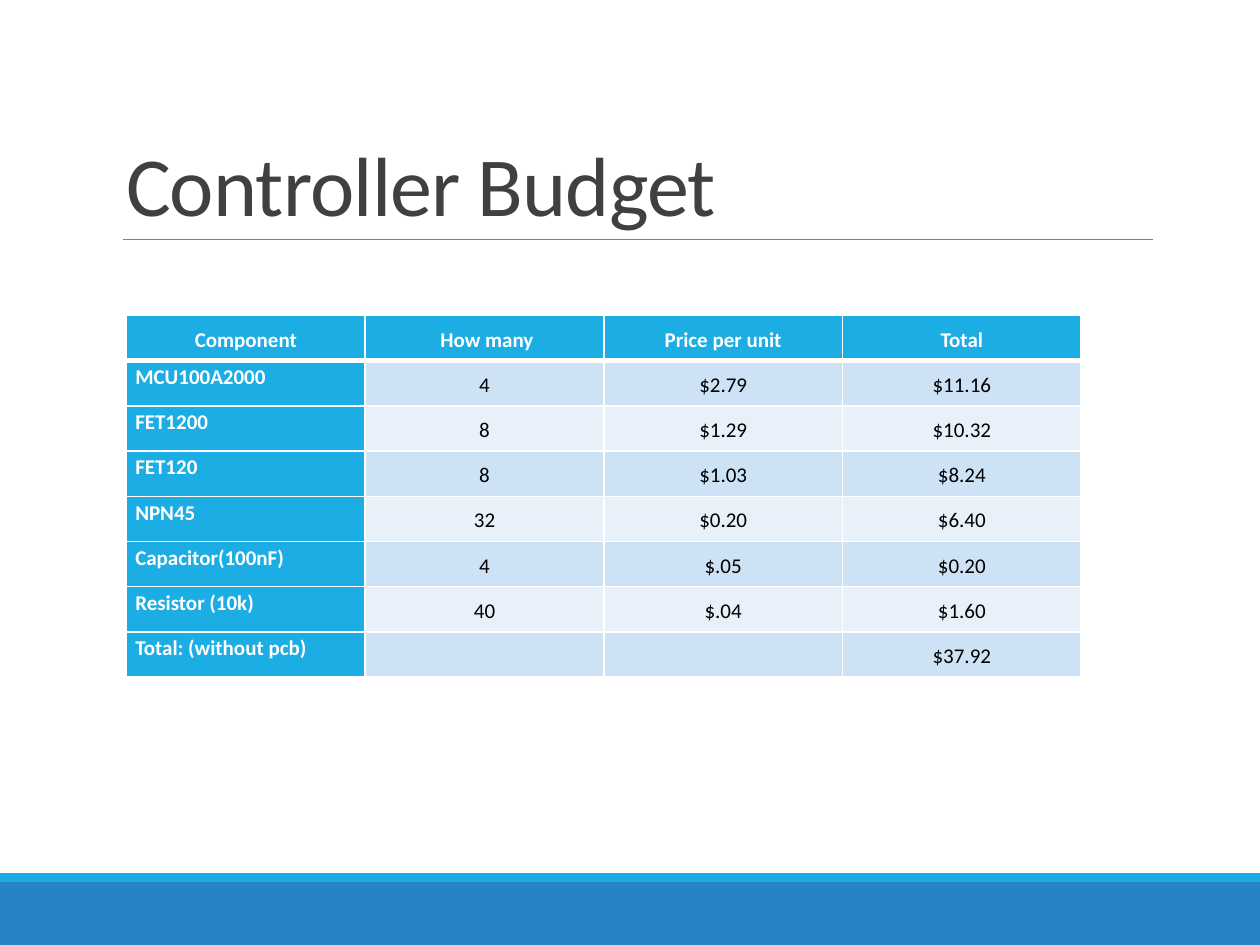
from lxml import etree
from pptx import Presentation
from pptx import util as u
from pptx.dml.color import RGBColor
from pptx.enum import shapes, text
from pptx.oxml.ns import qn

COLORS = {
    "blue": "2683C6", "sky": "1CADE4", "rule": "808080", "title": "404040",
    "white": "FFFFFF", "black": "000000", "band": "CDE3F5", "pale": "E8F1FA",
}
BUDGET = [
    ("Component", " How many", "Price per unit", "Total"),
    ("MCU100A2000", "4", "$2.79", "$11.16"),
    ("FET1200", "8", "$1.29", "$10.32"),
    ("FET120", "8", "$1.03", "$8.24"),
    ("NPN45", "32", "$0.20", "$6.40"),
    ("Capacitor(100nF)", "4", "$.05", "$0.20"),
    ("Resistor (10k)", "40", "$.04", "$1.60"),
    ("Total: (without pcb)", "", "", "$37.92"),
]


def color(name):
    return RGBColor.from_string(COLORS[name])


def assign(target, values):
    for name, value in values.items():
        setattr(target, name, value)


class SlideBuilder:
    """Holds the text style and the slide being filled."""

    def __init__(self, slide, font="Calibri"):
        self.slide = slide
        self.font = font

    def bar(self, left, top, width, height, fill):
        bar = self.slide.shapes.add_shape(
            shapes.MSO_SHAPE.RECTANGLE, *map(u.Pt, (left, top, width, height)))
        bar.shadow.inherit = False
        bar.fill.solid()
        bar.fill.fore_color.rgb = color(fill)
        bar.line.fill.background()

    def rule(self, left, right, y, stroke, weight):
        rule = self.slide.shapes.add_connector(
            shapes.MSO_CONNECTOR.STRAIGHT, *map(u.Pt, (left, y, right, y)))
        rule.line.color.rgb = color(stroke)
        rule.line.width = u.Pt(weight)
        etree.SubElement(rule._element.spPr, qn("a:effectLst"))

    def add_span(self, para, content, size, ink, bold=False):
        span = para.add_run()
        span.text = content
        assign(span.font, {"name": self.font, "size": u.Pt(size), "bold": bold})
        span.font.color.rgb = color(ink)
        return span

    def title(self, left, top, width, height, content):
        box = self.slide.shapes.add_textbox(*map(u.Pt, (left, top, width, height)))
        assign(box.text_frame, {"word_wrap": True,
                                "vertical_anchor": text.MSO_ANCHOR.BOTTOM})
        para = box.text_frame.paragraphs[0]
        para.line_spacing = 0.85
        span = self.add_span(para, content, 48, "title")
        span._r.get_or_add_rPr().set("spc", "-50")

    def borders(self, cell, bottom):
        """Draw white cell edges; they must precede the fill in the cell XML."""
        properties = cell._tc.get_or_add_tcPr()
        for side, weight in (("L", 1), ("R", 1), ("T", 1), ("B", bottom)):
            edge = etree.SubElement(properties, qn(f"a:ln{side}"), w=str(u.Pt(weight)))
            paint = etree.SubElement(edge, qn("a:solidFill"))
            etree.SubElement(paint, qn("a:srgbClr"), val=COLORS["white"])

    def cell(self, cell, content, row, column):
        header, label = row == 0, column == 0
        strong = header or label
        self.borders(cell, 3 if header else 1)
        cell.fill.solid()
        cell.fill.fore_color.rgb = color(
            "sky" if strong else "band" if row % 2 else "pale")
        top_left = label and not header
        assign(cell, {
            "margin_left": u.Pt(5), "margin_right": u.Pt(5),
            "margin_top": 0, "margin_bottom": 0,
            "vertical_anchor": text.MSO_ANCHOR.TOP if top_left else text.MSO_ANCHOR.MIDDLE,
        })
        if content:
            para = cell.text_frame.paragraphs[0]
            assign(para, {
                "line_spacing": 1.15,
                "alignment": text.PP_ALIGN.LEFT if top_left else text.PP_ALIGN.CENTER,
            })
            self.add_span(para, content, 12, "white" if strong else "black", strong)

    def table(self, left, top, width, height, rows):
        table = self.slide.shapes.add_table(
            len(rows), len(rows[0]), *map(u.Pt, (left, top, width, height))).table
        for r, values in enumerate(rows):
            for c, content in enumerate(values):
                self.cell(table.cell(r, c), content, r, c)


def main():
    deck = Presentation()
    deck.slide_width, deck.slide_height = u.Pt(720), u.Pt(540)
    page = SlideBuilder(deck.slides.add_slide(deck.slide_layouts[6]))
    page.bar(0, 504, 720, 36, "blue")
    page.bar(0, 499, 720, 5, "sky")
    page.rule(70.5, 659, 136.8, "rule", 0.5)
    page.title(65, 22.5, 594, 114.3, "Controller Budget")
    page.table(72.3, 180.3, 545.6, 206.6, BUDGET)
    deck.save("out.pptx")


if __name__ == "__main__":
    main()
